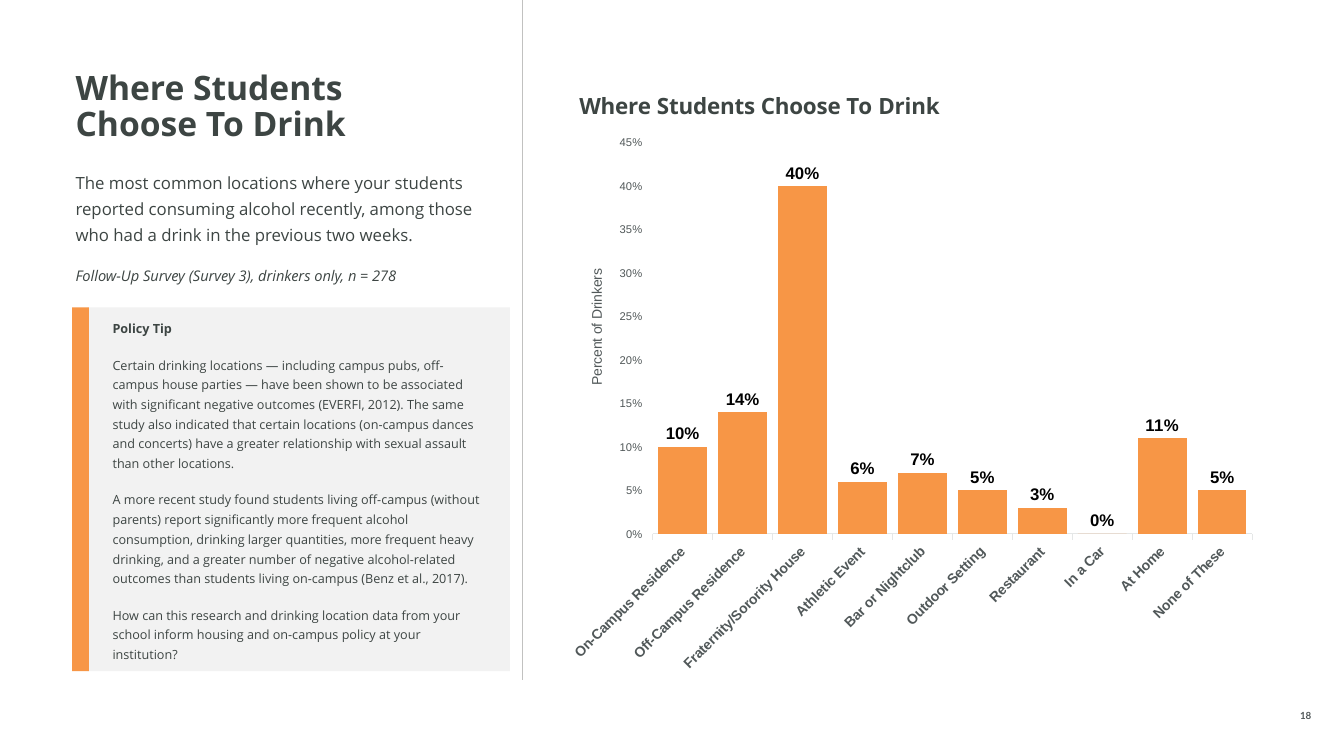
import pptx
import pptx.chart.data
import pptx.dml.color
import pptx.enum.chart
import pptx.enum.shapes
import pptx.enum.text
import pptx.oxml
import pptx.oxml.ns
import pptx.util

COLORS = {"ink": "3D4543", "gray": "515859", "rule": "C1C1C0", "axis": "E5E7E7",
          "panel": "F2F2F2", "orange": "F79646", "black": "000000", "white": "FFFFFF"}
UNIT = pptx.util.Inches(1) / 12  # the slide is a grid of 160 columns by 90 rows
HEADING = "Where Students Choose To Drink"


def grid(*cells):
    return [round(cell * UNIT) for cell in cells]


def style(font, size, color, name="Open Sans", bold=False, italic=False):
    font.size, font.name = pptx.util.Pt(size), name
    font.bold, font.italic = bold, italic
    font.color.rgb = pptx.dml.color.RGBColor.from_string(COLORS[color])


deck = pptx.Presentation()
deck.slide_width, deck.slide_height = grid(160, 90)
page = deck.slides.add_slide(deck.slide_layouts[6])
page.background.fill.solid()
page.background.fill.fore_color.rgb = pptx.dml.color.RGBColor.from_string(COLORS["white"])

# Divider between the text and the chart
divider = page.shapes.add_connector(pptx.enum.shapes.MSO_CONNECTOR.STRAIGHT,
                                    *grid(62.2, 0, 62.2, 81))
divider.line.color.rgb = pptx.dml.color.RGBColor.from_string(COLORS["rule"])
divider.line.width = pptx.util.Pt(1)
pptx.oxml.parse_xml  # effect list below removes the connector's shadow
divider._element.spPr.append(
    pptx.oxml.parse_xml(f"<a:effectLst {pptx.oxml.ns.nsdecls('a')}/>"))

# Policy tip panel and its accent bar
panels = []
for cells, color in (((10.4, 36.6, 50.3, 43.3), "panel"), ((8.6, 36.6, 2, 43.3), "orange")):
    panel = page.shapes.add_shape(pptx.enum.shapes.MSO_SHAPE.RECTANGLE, *grid(*cells))
    panel.shadow.inherit = False
    panel.fill.solid()
    panel.fill.fore_color.rgb = pptx.dml.color.RGBColor.from_string(COLORS[color])
    panel.line.fill.background()
    panels.append(panel)

# Text: box, side inset, anchor, alignment, line spacing, paragraphs
# A paragraph holds its lines, then size, colour, font, bold and italic
anchors = pptx.enum.text.MSO_ANCHOR
aligns = pptx.enum.text.PP_ALIGN
tip_style = (9, "ink", "Open Sans")
texts = [
    (page.shapes.add_textbox(*grid(9, 8.5, 47.3, 8.4)), 0, anchors.TOP, aligns.LEFT, 0.9, [
        (["Where Students ", "Choose To Drink"], 24, "ink", "Open Sans", True)]),
    (page.shapes.add_textbox(*grid(9, 19.8, 51.7, 22)), 0, anchors.TOP, aligns.LEFT, 1.3, [
        (["The most common locations where your students reported consuming alcohol "
          "recently, among those who had a drink in the previous two weeks."], 12, "ink"),
        (["Follow-Up Survey (Survey 3), drinkers only, n = 278"],
         10.5, "ink", "Open Sans", False, True)]),
    (panels[0], 3, anchors.MIDDLE, aligns.LEFT, 1.3, [
        (["Policy Tip"], *tip_style, True),
        (["Certain drinking locations — including campus pubs, off-campus house parties — "
          "have been shown to be associated with significant negative outcomes "
          "(EVERFI, 2012). The same study also indicated that certain locations "
          "(on-campus dances and concerts) have a greater relationship with sexual "
          "assault than other locations."], *tip_style),
        (["A more recent study found students living off-campus (without parents) report "
          "significantly more frequent alcohol consumption, drinking larger quantities, "
          "more frequent heavy drinking, and a greater number of negative alcohol-related "
          "outcomes than students living on-campus (Benz et al., 2017)."], *tip_style),
        (["How can this research and drinking location data from your school inform "
          "housing and on-campus policy at your institution?"], *tip_style)]),
    (page.shapes.add_textbox(*grid(152.4, 84.1, 6.1, 1.8)), 0, anchors.BOTTOM,
     aligns.CENTER, 1, [(["18"], 7, "gray", "Lato", True)]),
]
for box, inset, anchor, align, spacing, paragraphs in texts:
    frame = box.text_frame
    frame.word_wrap = True
    frame.vertical_anchor = anchor
    frame.margin_left, frame.margin_right = grid(inset, inset)
    frame.margin_top = frame.margin_bottom = 0
    for index, (lines, *look) in enumerate(paragraphs):
        para = frame.add_paragraph() if index else frame.paragraphs[0]
        para.alignment, para.line_spacing = align, spacing
        if index:
            para.space_before = pptx.util.Pt(12)
        for number, line in enumerate(lines):
            if number:
                para.add_line_break()
            span = para.add_run()
            span.text = line
            style(span.font, *look)

# Column chart
places = {"On-Campus Residence": 0.10, "Off-Campus Residence": 0.14,
          "Fraternity/Sorority House": 0.40, "Athletic Event": 0.06,
          "Bar or Nightclub": 0.07, "Outdoor Setting": 0.05, "Restaurant": 0.03,
          "In a Car": 0, "At Home": 0.11, "None of These": 0.05}
data = pptx.chart.data.CategoryChartData(number_format="0%")
data.categories = list(places)
data.add_series("Series 1", list(places.values()))
chart = page.shapes.add_chart(pptx.enum.chart.XL_CHART_TYPE.COLUMN_CLUSTERED,
                              *grid(68, 9, 82.9, 72), data).chart
style(chart.font, 10, "gray", "Arial")
chart.has_legend = False
chart.has_title = True

plot = chart.plots[0]
plot.gap_width = 23
plot.vary_by_categories = False
bars = plot.series[0].format.fill
bars.solid()
bars.fore_color.rgb = pptx.dml.color.RGBColor.from_string(COLORS["orange"])
plot.has_data_labels = True
labels = plot.data_labels
labels.show_value = True
labels.number_format, labels.number_format_is_linked = "0%", False
labels.position = pptx.enum.chart.XL_LABEL_POSITION.OUTSIDE_END
style(labels.font, 12, "black", "Arial", True)

# Axes
places_axis, share_axis = chart.category_axis, chart.value_axis
style(places_axis.tick_labels.font, 10, "gray", "Arial", True)
places_axis.format.line.color.rgb = pptx.dml.color.RGBColor.from_string(COLORS["axis"])
places_axis.format.line.width = pptx.util.Pt(0.75)
places_axis._element.txPr.find(pptx.oxml.ns.qn("a:bodyPr")).set("rot", "-2700000")
style(share_axis.tick_labels.font, 8, "gray", "Arial")
share_axis.tick_labels.number_format = "0%"
share_axis.tick_labels.number_format_is_linked = False
share_axis.minimum_scale, share_axis.maximum_scale = 0, 0.45
share_axis.major_unit = 0.05
share_axis.has_major_gridlines = False
share_axis.format.line.fill.background()
share_axis.has_title = True

# Chart titles
for title, words, look in (
        (chart.chart_title, HEADING, (16, "ink", "Open Sans", True)),
        (share_axis.axis_title, "Percent of Drinkers", (10, "gray", "Arial"))):
    span = title.text_frame.paragraphs[0].add_run()
    span.text = words
    style(span.font, *look)
body = share_axis.axis_title.text_frame._txBody.find(pptx.oxml.ns.qn("a:bodyPr"))
body.set("rot", "-5400000")
body.set("vert", "horz")

# Fixed places inside the chart, as shares of its size
plot_area = chart._chartSpace.chart.plotArea
for part, position, shares in (
        (chart.chart_title._element, 1, {"x": 0.006, "y": 0.015}),
        (share_axis.axis_title._element, 1, {"x": 0.02, "y": 0.315}),
        (plot_area, 0, {"x": 0.117, "y": 0.111, "w": 0.861, "h": 0.647})):
    previous = part.find(pptx.oxml.ns.qn("c:layout"))
    if previous is not None:
        part.remove(previous)
    target = '<c:layoutTarget val="inner"/>' if part is plot_area else ""
    modes = "".join(f'<c:{key}Mode val="edge"/>' for key in "xy")
    values = "".join(f'<c:{key} val="{share}"/>' for key, share in shares.items())
    part.insert(position, pptx.oxml.parse_xml(
        f"<c:layout {pptx.oxml.ns.nsdecls('c')}><c:manualLayout>"
        f"{target}{modes}{values}</c:manualLayout></c:layout>"))

deck.save("out.pptx")
